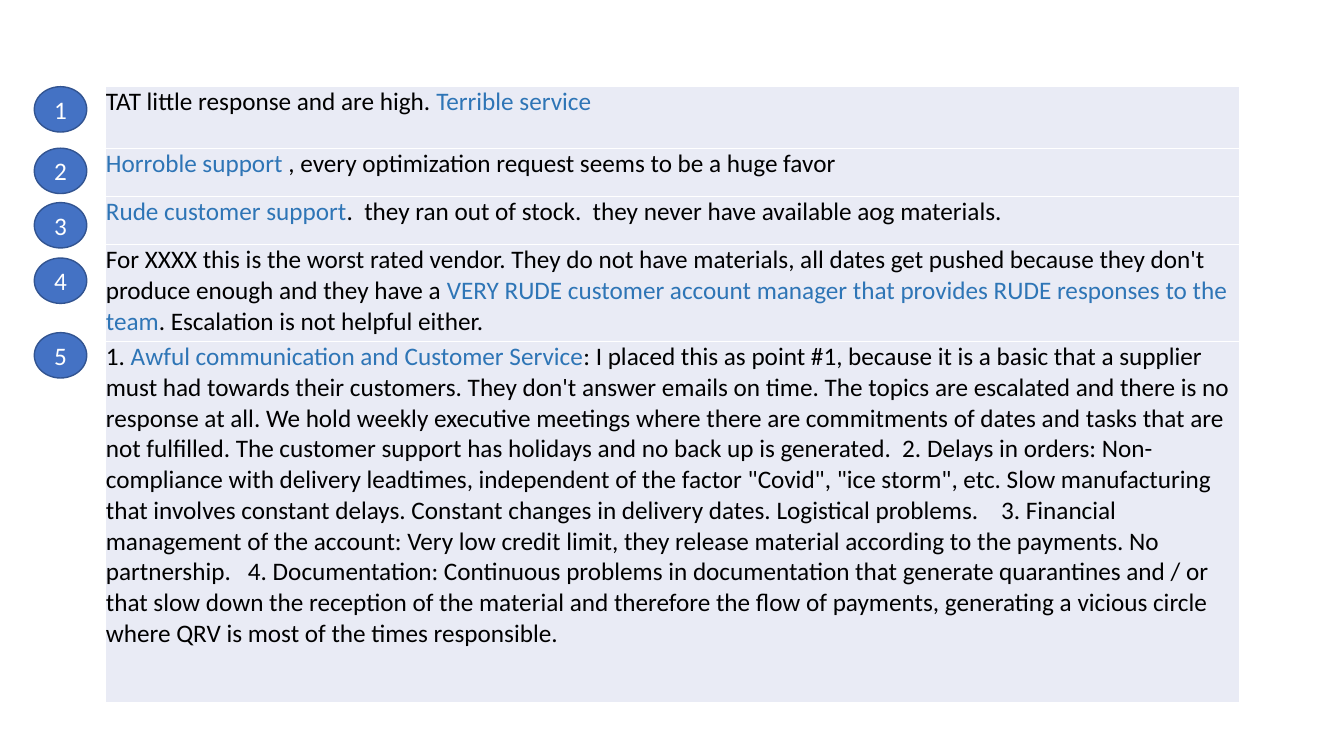
from lxml import etree
from pptx import Presentation
from pptx.dml.color import RGBColor as RGB
from pptx.enum.shapes import MSO_SHAPE as SHAPE
from pptx.enum.text import MSO_ANCHOR as ANCHOR, PP_ALIGN as ALIGN
from pptx.oxml.ns import qn
from pptx.util import Inches, Pt

BLACK = RGB(0x00, 0x00, 0x00)
WHITE = RGB(0xFF, 0xFF, 0xFF)
HIGHLIGHT = RGB(0x2E, 0x75, 0xB6)
CELL_FILL = RGB(0xE9, 0xEB, 0xF5)
BADGE_FILL = RGB(0x44, 0x72, 0xC4)
BADGE_LINE = RGB(0x32, 0x54, 0x91)

ROW_HEIGHTS = [0.61, 0.48, 0.48, 0.96, 3.58]
BADGE_TOPS = [0.86, 1.47, 2.01, 2.56, 3.3]

COMMENTS = [
    [("TAT little response and are high. ", BLACK),
     ("Terrible service", HIGHLIGHT)],
    [("Horroble support ", HIGHLIGHT),
     (", every optimization request seems to be a huge favor", BLACK)],
    [("Rude customer support", HIGHLIGHT),
     (".  they ran out of stock.  they never have available aog materials.", BLACK)],
    [("For XXXX this is the worst rated vendor. They do not have materials, all dates "
      "get pushed because they don't produce enough and they have a ", BLACK),
     ("VERY RUDE customer account manager that provides RUDE responses to the team",
      HIGHLIGHT),
     (". Escalation is not helpful either.", BLACK)],
    [("1. ", BLACK),
     ("Awful communication and Customer Service", HIGHLIGHT),
     (": I placed this as point #1, because it is a basic that a supplier must had "
      "towards their customers. They don't answer emails on time. The topics are "
      "escalated and there is no response at all. We hold weekly executive meetings "
      "where there are commitments of dates and tasks that are not fulfilled. The "
      "customer support has holidays and no back up is generated.  ", BLACK),
     ("2. Delays in orders: Non-compliance with delivery leadtimes, independent of "
      "the factor \"Covid\", \"ice storm\", etc. Slow manufacturing that involves "
      "constant delays. Constant changes in delivery dates. Logistical problems.    ",
      BLACK),
     ("3. Financial management of the account: Very low credit limit, they release "
      "material according to the payments. No partnership.   ", BLACK),
     ("4. Documentation: Continuous problems in documentation that generate "
      "quarantines and / or that slow down the reception of the material and "
      "therefore the flow of payments, generating a vicious circle where QRV is "
      "most of the times responsible.", BLACK)],
]


def add_run(p, text, color):
    r = p.add_run()
    r.text = text
    r.font.name = "Calibri"
    r.font.size = Pt(18)
    r.font.color.rgb = color


def set_borders(cell):
    tc_pr = cell._tc.get_or_add_tcPr()
    for i, side in enumerate(("lnL", "lnR", "lnT", "lnB")):
        ln = etree.Element(qn(f"a:{side}"), w=str(Pt(1)))
        fill = etree.SubElement(ln, qn("a:solidFill"))
        etree.SubElement(fill, qn("a:srgbClr"), val=str(WHITE))
        tc_pr.insert(i, ln)


def fill_cell(cell, runs):
    cell.margin_left = cell.margin_right = 0
    cell.margin_top = cell.margin_bottom = 0
    cell.fill.solid()
    cell.fill.fore_color.rgb = CELL_FILL
    set_borders(cell)
    for text, color in runs:
        add_run(cell.text_frame.paragraphs[0], text, color)


def add_comment_table(s):
    frame = s.shapes.add_table(len(COMMENTS), 1, Inches(1.05), Inches(0.86),
                               Inches(11.24), Inches(sum(ROW_HEIGHTS)))
    table = frame.table
    table.first_row = False
    table.horz_banding = False
    for i, (height, runs) in enumerate(zip(ROW_HEIGHTS, COMMENTS)):
        table.rows[i].height = Inches(height)
        fill_cell(table.cell(i, 0), runs)


def add_badge(s, number, top):
    sp = s.shapes.add_shape(SHAPE.OVAL, Inches(0.34), Inches(top),
                            Inches(0.52), Inches(0.45))
    sp.shadow.inherit = False
    sp.fill.solid()
    sp.fill.fore_color.rgb = BADGE_FILL
    sp.line.color.rgb = BADGE_LINE
    sp.line.width = Pt(1)
    tf = sp.text_frame
    tf.vertical_anchor = ANCHOR.MIDDLE
    p = tf.paragraphs[0]
    p.alignment = ALIGN.CENTER
    add_run(p, str(number), WHITE)


def main():
    prs = Presentation()
    prs.slide_width = Inches(13.33)
    prs.slide_height = Inches(7.5)
    s = prs.slides.add_slide(prs.slide_layouts[6])
    add_comment_table(s)
    for number, top in enumerate(BADGE_TOPS, start=1):
        add_badge(s, number, top)
    prs.save("out.pptx")


if __name__ == "__main__":
    main()
